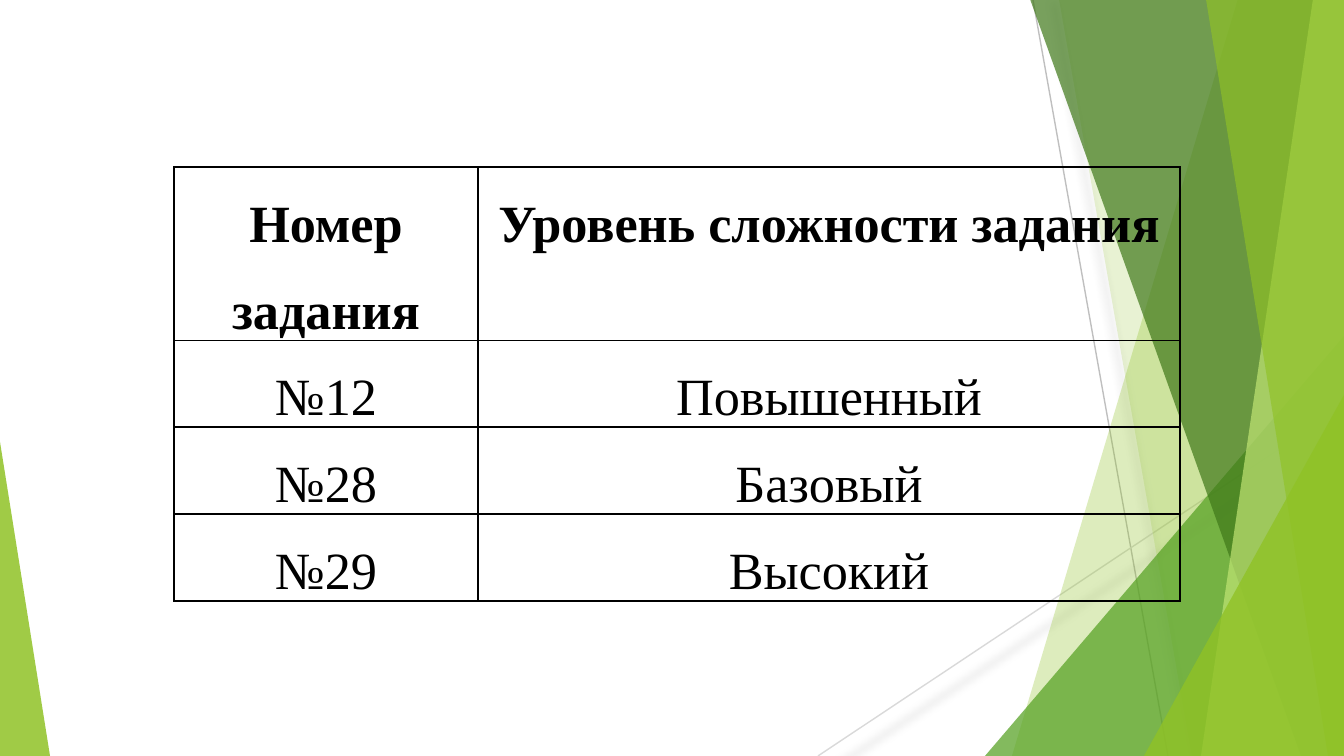
from lxml import etree
from pptx import Presentation
from pptx.dml.color import RGBColor
from pptx.enum.shapes import MSO_CONNECTOR, MSO_SHAPE
from pptx.enum.text import PP_ALIGN
from pptx.oxml import parse_xml
from pptx.oxml.ns import qn
from pptx.util import Emu, Pt

NS = 'xmlns:a="http://schemas.openxmlformats.org/drawingml/2006/main"'
W, H = 1344, 756

# Content
ROWS = [
    ("Номер задания", "Уровень сложности задания"),
    ("№12", "Повышенный"),
    ("№28", "Базовый"),
    ("№29", "Высокий"),
]
TABLE_LEFT, TABLE_TOP, ROW_HEIGHT = 174, 167, 83
COLUMNS = [304, 702]

# Decoration: start, end, colour
LINES = [
    ((1033, 0), (1168, H), "BFBFBF"),
    ((W, 406), (818, H), "D9D9D9"),
]
# Bands run to the right edge: top-left x, bottom-left x, colour, opacity %
BACK_BANDS = [(1238, 1012, "90C226", 30), (1059, 1192, "90C226", 20)]
FRONT_BANDS = [
    (1030, 1301, "3F7819", 70),
    (1313, 1201, "C0E474", 70),
    (1206, 1328, "90C226", 65),
]
# Triangles stand on the bottom edge: left, top, width, apex, colour, opacity %
BACK_TRIANGLES = [(985, 336, 359, 1, "54A021", 72)]
FRONT_TRIANGLES = [
    (1144, 395, 200, 1, "90C226", 80),
    (0, 442, 50, 0, "90C226", 85),
]


def px(n):
    return Emu(round(n * 914400 / 134.4))


def color(value):
    return RGBColor.from_string(value)


def paint(sp, fill, opacity):
    sp.shadow.inherit = False
    sp.line.fill.background()
    sp.fill.solid()
    sp.fill.fore_color.rgb = color(fill)
    clr = sp._element.spPr.find(qn("a:solidFill"))[0]
    etree.SubElement(clr, qn("a:alpha")).set("val", str(opacity * 1000))


def add_bands(bands):
    for top_x, bottom_x, fill, opacity in bands:
        fb = s.shapes.build_freeform(px(top_x), px(-1), scale=1.0)
        corners = [(W, -1), (W, H), (bottom_x, H)]
        fb.add_line_segments([(px(x), px(y)) for x, y in corners], close=True)
        paint(fb.convert_to_shape(), fill, opacity)


def add_triangles(triangles):
    for left, top, width, apex, fill, opacity in triangles:
        sp = s.shapes.add_shape(MSO_SHAPE.ISOSCELES_TRIANGLE, px(left), px(top),
                                px(width), px(H - top))
        sp.adjustments[0] = apex
        paint(sp, fill, opacity)


def add_borders(cell):
    tc_pr = cell._tc.get_or_add_tcPr()
    for i, side in enumerate(("lnL", "lnR", "lnT", "lnB")):
        tc_pr.insert(i, parse_xml(
            f'<a:{side} {NS} w="12700"><a:solidFill><a:srgbClr val="000000"/>'
            f'</a:solidFill></a:{side}>'))


prs = Presentation()
prs.slide_width, prs.slide_height = px(W), px(H)
s = prs.slides.add_slide(prs.slide_layouts[6])

# Thin lines with a soft shadow
for start, end, stroke in LINES:
    line = s.shapes.add_connector(MSO_CONNECTOR.STRAIGHT, *map(px, start + end))
    line.line.color.rgb = color(stroke)
    line.line.width = Pt(0.75)
    line._element.spPr.append(parse_xml(
        f'<a:effectLst {NS}><a:outerShdw blurRad="63500" dist="12700" dir="5400000" '
        'sx="102000" sy="101000" rotWithShape="0"><a:srgbClr val="000000">'
        '<a:alpha val="32000"/></a:srgbClr></a:outerShdw></a:effectLst>'))

# Green facets, back to front
add_bands(BACK_BANDS)
add_triangles(BACK_TRIANGLES)
add_bands(FRONT_BANDS)
add_triangles(FRONT_TRIANGLES)

# Table
table = s.shapes.add_table(len(ROWS), len(COLUMNS), px(TABLE_LEFT), px(TABLE_TOP),
                           px(sum(COLUMNS)), px(ROW_HEIGHT * len(ROWS))).table
table.horz_banding = False
for column, width in zip(table.columns, COLUMNS):
    column.width = px(width)
for i, texts in enumerate(ROWS):
    for j, text in enumerate(texts):
        cell = table.cell(i, j)
        cell.fill.background()
        add_borders(cell)
        cell.margin_left = cell.margin_right = px(9)
        cell.margin_top = cell.margin_bottom = 0
        p = cell.text_frame.paragraphs[0]
        p.text = text
        p.alignment = PP_ALIGN.CENTER
        p.line_spacing = 1.5
        font = p.runs[0].font
        font.name = "Times New Roman"
        font.size = Pt(28)
        font.bold = i == 0
        font.color.rgb = color("000000")

prs.save("out.pptx")
